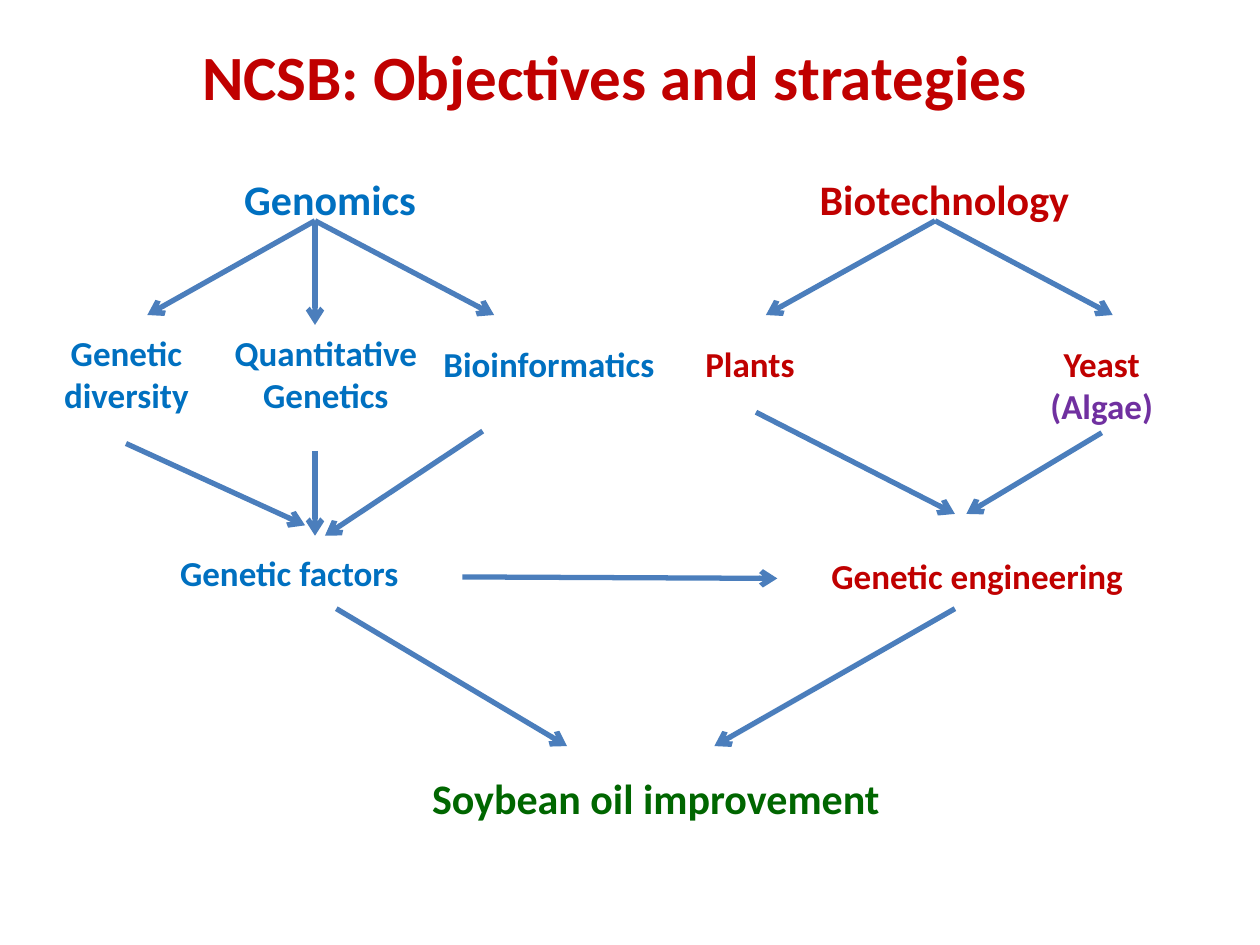
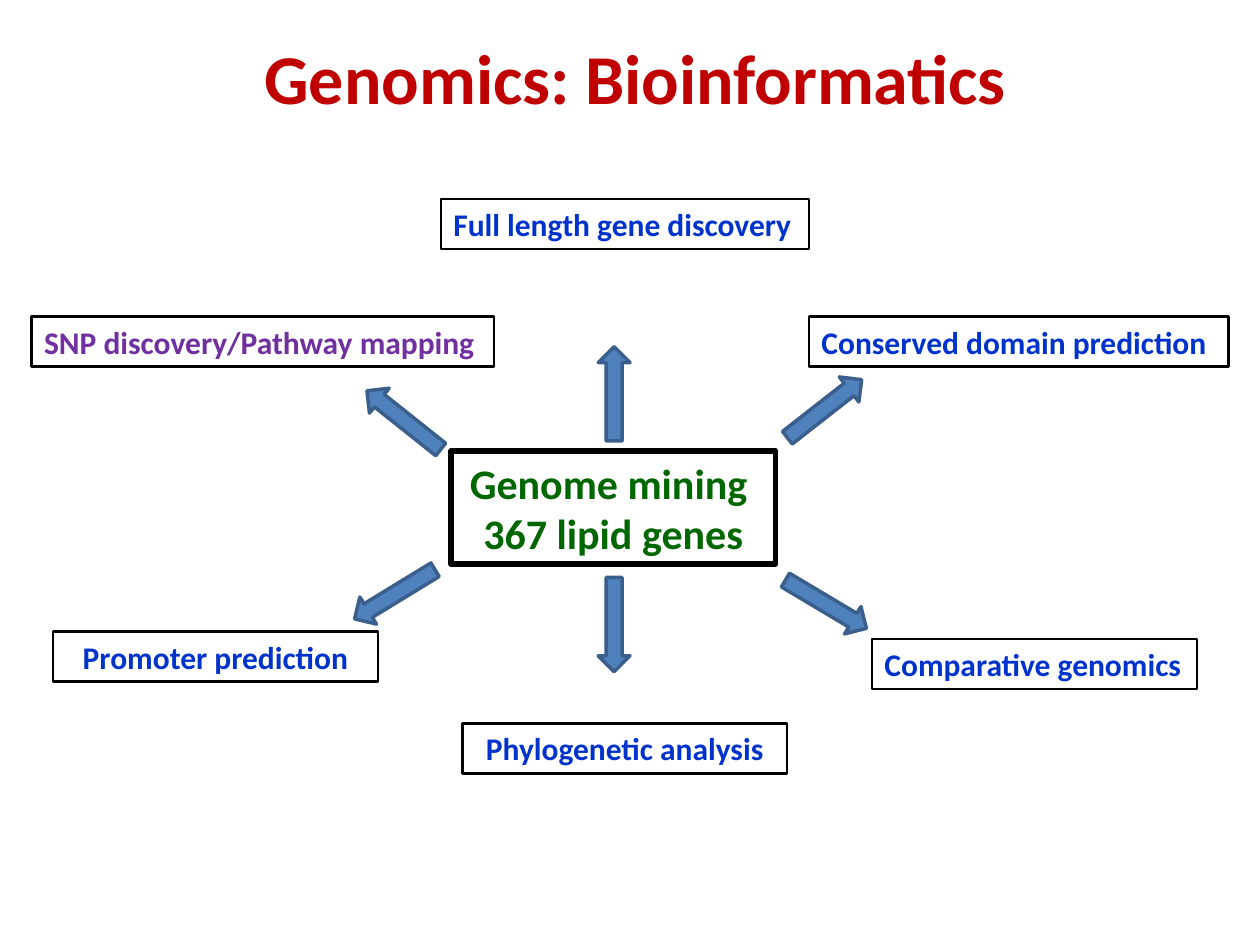
import pptx
import pptx.util
import pptx.dml.color
import pptx.enum.shapes
import pptx.enum.text
import pptx.oxml
import pptx.oxml.ns
from dataclasses import dataclass
from typing import Any, NamedTuple, Optional

Cm = pptx.util.Cm
Pt = pptx.util.Pt
Shapes = pptx.enum.shapes.MSO_SHAPE
Align = pptx.enum.text.PP_ALIGN


@dataclass(frozen=True)
class Theme:
    font: str = "Calibri"
    red: str = "C00000"
    blue: str = "0070C0"
    royal: str = "0033CC"
    green: str = "006600"
    purple: str = "7030A0"
    black: str = "000000"
    wire: str = "4B7EBC"
    fill: str = "4F81BD"
    edge: str = "3A5F8C"
    small: int = 18
    base: int = 20
    large: int = 24
    title: int = 36
    huge: int = 40


THEME = Theme()


class Label(NamedTuple):
    text: str
    left: float
    top: float
    width: float
    color: str
    size: int = THEME.base
    mid: bool = True
    lines: int = 1
    last: str = ""
    border: float = 0


class Wire(NamedTuple):
    x1: float
    y1: float
    x2: float
    y2: float
    start: str = ""


class Arrow(NamedTuple):
    left: float
    top: float
    turn: float


GOALS = [
    Label("Genomics", 3.38, 3.38, 6.55, THEME.blue, THEME.large),
    Label("Biotechnology", 14.81, 3.38, 8.46, THEME.red, THEME.large),
    Label("Genetic diversity", 0.43, 6.55, 4.24, THEME.blue, lines=2),
    Label("Quantitative Genetics", 4.45, 6.55, 4.24, THEME.blue, lines=2),
    Label("Bioinformatics", 8.69, 6.78, 5.08, THEME.blue, mid=False),
    Label("Plants", 13.97, 6.78, 2.54, THEME.red, mid=False),
    Label("Yeast\n(Algae)", 20.52, 6.78, 3.38, THEME.red, lines=2, last=THEME.purple),
    Label("Genetic factors", 3.38, 11, 5.51, THEME.blue, mid=False),
    Label("Genetic engineering", 16.51, 11.05, 7.62, THEME.red, mid=False),
    Label("Soybean oil improvement", 8.46, 15.44, 10.36, THEME.green, THEME.large, mid=False),
]

WIRES = [
    *(Wire(6.35, 4.45, x, y) for x, y in ((2.97, 6.35), (6.35, 6.55), (9.96, 6.35))),
    *(Wire(18.85, 4.45, x, 6.35) for x in (15.44, 22.43)),
    Wire(2.54, 8.94, 6.15, 10.59),
    Wire(6.35, 9.09, 6.35, 10.8),
    Wire(9.73, 8.69, 6.55, 10.8),
    Wire(15.24, 8.31, 19.25, 10.36),
    Wire(22.21, 8.73, 19.48, 10.36, "Yeast\n(Algae)"),
    Wire(9.32, 11.63, 15.67, 11.66),
    Wire(6.78, 12.27, 11.43, 15.04),
    Wire(19.25, 12.27, 14.4, 15.04),
]


def task(text: str, left: float, top: float, width: float = 6.55,
         color: str = THEME.royal, mid: bool = False) -> Label:
    return Label(text, left, top, width, color, THEME.small, mid, border=1.5)


TASKS = [
    Label("Genome mining \n367 lipid genes", 9.09, 9.09, 6.55, THEME.green,
          THEME.large, lines=2, border=3),
    task("Full length gene discovery", 8.89, 4.01, 7.42),
    task("SNP discovery/Pathway mapping", 0.64, 6.38, 9.32, THEME.purple),
    task("Conserved domain prediction", 16.31, 6.38, 8.46),
    task("Promoter prediction", 1.07, 12.73, mid=True),
    task("Comparative genomics", 17.58, 12.88),
    task("Phylogenetic analysis", 9.32, 14.58, mid=True),
]

ARROWS = [
    Arrow(7.19, 8.15, 38.5),
    Arrow(11.43, 7.62, 90),
    Arrow(15.67, 7.92, 142),
    Arrow(15.7, 11.86, 210.8),
    Arrow(11.43, 12.27, 270),
    Arrow(7.01, 11.66, 328.6),
]


def tint(code: str) -> Any:
    return pptx.dml.color.RGBColor.from_string(code)


def write(frame: Any, text: str, *, size: int, color: str, mid: bool, last: str = "") -> None:
    frame.word_wrap = True
    frame.vertical_anchor = pptx.enum.text.MSO_ANCHOR.TOP
    frame.text = text
    for para in frame.paragraphs:
        para.alignment = Align.CENTER if mid else Align.LEFT
        font = para.runs[0].font
        font.name, font.size, font.bold = THEME.font, Pt(size), True
        font.color.rgb = tint(color)
    if last:
        font.color.rgb = tint(last)


def outline(shape: Any, color: str, width: float, fill: Optional[str] = None) -> None:
    shape.shadow.inherit = False
    if fill:
        shape.fill.solid()
        shape.fill.fore_color.rgb = tint(fill)
    else:
        shape.fill.background()
    shape.line.color.rgb = tint(color)
    shape.line.width = Pt(width)


def place(slide: Any, label: Label) -> Any:
    tall = 0.25 + label.lines * label.size * 1.2 * 2.54 / 72
    area = Cm(label.left), Cm(label.top), Cm(label.width), Cm(tall)
    if label.border:
        shape = slide.shapes.add_shape(Shapes.RECTANGLE, *area)
        outline(shape, THEME.black, label.border)
    else:
        shape = slide.shapes.add_textbox(*area)
    write(shape.text_frame, label.text, size=label.size, color=label.color,
          mid=label.mid, last=label.last)
    return shape


def connect(slide: Any, wire: Wire, boxes: dict[str, Any]) -> None:
    line = slide.shapes.add_connector(
        pptx.enum.shapes.MSO_CONNECTOR.STRAIGHT,
        Cm(wire.x1), Cm(wire.y1), Cm(wire.x2), Cm(wire.y2))
    if wire.start:
        line.begin_connect(boxes[wire.start], 2)
    line.line.color.rgb = tint(THEME.wire)
    line.line.width = Pt(3)
    props = line._element.spPr
    tail = pptx.oxml.parse_xml(f'<a:tailEnd {pptx.oxml.ns.nsdecls("a")} type="arrow"/>')
    props.find(pptx.oxml.ns.qn("a:ln")).append(tail)
    props.append(pptx.oxml.parse_xml(f'<a:effectLst {pptx.oxml.ns.nsdecls("a")}/>'))


def point(slide: Any, arrow: Arrow) -> None:
    shape = slide.shapes.add_shape(
        Shapes.LEFT_ARROW, Cm(arrow.left), Cm(arrow.top), Cm(1.9), Cm(0.64))
    shape.rotation = arrow.turn
    outline(shape, THEME.edge, 2, THEME.fill)


def start(deck: Any, title: Label) -> Any:
    slide = deck.slides.add_slide(deck.slide_layouts[6])
    place(slide, title)
    return slide


def main() -> None:
    deck = pptx.Presentation()
    deck.slide_width, deck.slide_height = Cm(25.4), Cm(19.05)

    slide = start(deck, Label("NCSB: Objectives and strategies", 0.64, 0.64, 23.5,
                              THEME.red, THEME.title))
    boxes = {goal.text: place(slide, goal) for goal in GOALS}
    for wire in WIRES:
        connect(slide, wire, boxes)

    slide = start(deck, Label("Genomics: Bioinformatics", 5.08, 0.58, 15.65,
                              THEME.red, THEME.huge, mid=False))
    for label in TASKS:
        place(slide, label)
    for arrow in ARROWS:
        point(slide, arrow)

    deck.save("out.pptx")


if __name__ == "__main__":
    main()
